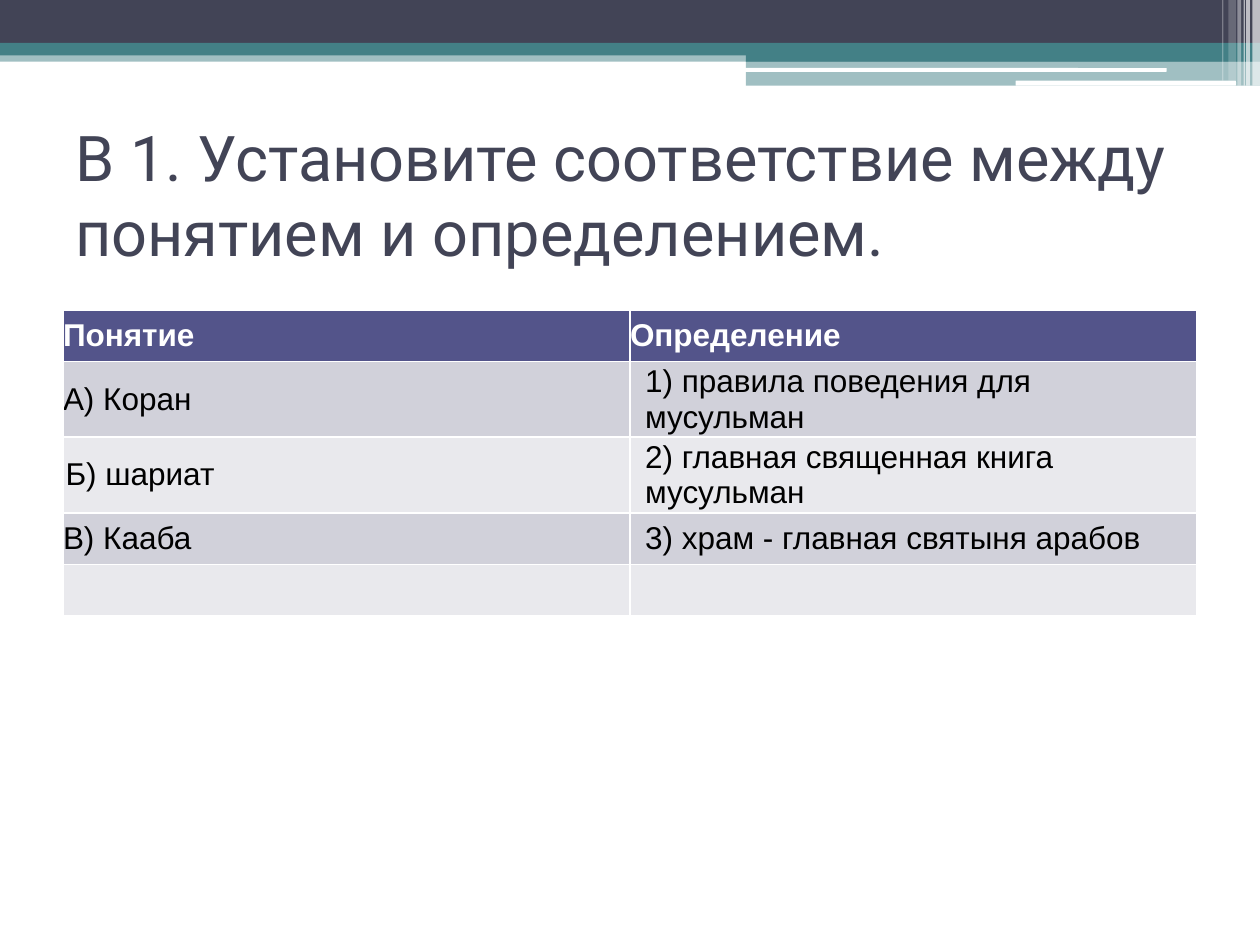
from dataclasses import dataclass

from lxml.etree import SubElement
from pptx import Presentation
from pptx.dml.color import RGBColor
from pptx.enum.shapes import MSO_SHAPE
from pptx.enum.text import MSO_ANCHOR
from pptx.oxml.ns import qn
from pptx.util import Inches, Pt


@dataclass(frozen=True)
class Theme:
    dark: str = "424456"
    teal: str = "438086"
    white: str = "FFFFFF"
    black: str = "000000"
    header: str = "53548A"
    bands: tuple = ("D1D1DA", "E9E9ED")
    title_font: str = "Roboto"
    body_font: str = "Arial"
    title_size: int = 36
    body_size: int = 18


def write_text(tf, text, *, font, size, color, bold=False, indent=0):
    p = tf.paragraphs[0]
    if indent:
        p._p.get_or_add_pPr().set("marL", str(Inches(indent)))
    r = p.add_run()
    r.text = text
    r.font.name = font
    r.font.size = Pt(size)
    r.font.bold = bold
    r.font.color.rgb = RGBColor.from_string(color)


class SlideBuilder:
    def __init__(self, slide, theme):
        self.s = slide
        self.theme = theme

    def bar(self, x, y, w, h, color, alpha=100, rounded=False):
        kind = MSO_SHAPE.ROUNDED_RECTANGLE if rounded else MSO_SHAPE.RECTANGLE
        sp = self.s.shapes.add_shape(kind, Inches(x), Inches(y), Inches(w), Inches(h))
        sp.shadow.inherit = False
        sp.line.fill.background()
        sp.fill.solid()
        sp.fill.fore_color.rgb = RGBColor.from_string(color)
        if alpha < 100:
            clr = sp._element.spPr.find(qn("a:solidFill"))[0]
            SubElement(clr, qn("a:alpha")).set("val", str(alpha * 1000))

    def title(self, x, y, w, h, text, bottom_inset):
        sp = self.s.shapes.add_textbox(Inches(x), Inches(y), Inches(w), Inches(h))
        tf = sp.text_frame
        tf.word_wrap = True
        tf.vertical_anchor = MSO_ANCHOR.MIDDLE
        tf.margin_bottom = Inches(bottom_inset)
        t = self.theme
        write_text(tf, text, font=t.title_font, size=t.title_size, color=t.dark)

    def table(self, x, y, w, row_h, rows):
        t = self.theme
        tbl = self.s.shapes.add_table(
            len(rows), len(rows[0]), Inches(x), Inches(y), Inches(w), Inches(row_h * len(rows))
        ).table
        for i, row in enumerate(rows):
            is_header = i == 0
            fill = t.header if is_header else t.bands[(i - 1) % 2]
            for j, (text, indent) in enumerate(row):
                cell = tbl.cell(i, j)
                cell.fill.solid()
                cell.fill.fore_color.rgb = RGBColor.from_string(fill)
                if not text:
                    continue
                cell.vertical_anchor = MSO_ANCHOR.MIDDLE
                cell.margin_left = cell.margin_right = 0
                cell.margin_top = cell.margin_bottom = 0
                write_text(cell.text_frame, text, font=t.body_font, size=t.body_size,
                           color=t.white if is_header else t.black,
                           bold=is_header, indent=indent)


def main():
    prs = Presentation()
    prs.slide_width, prs.slide_height = Inches(10), Inches(7.5)
    theme = Theme()
    s = SlideBuilder(prs.slides.add_slide(prs.slide_layouts[6]), theme)

    header_bars = [
        (0, 0.4, 10, 0.09, theme.teal, 50),
        (0, 0, 10, 0.34, theme.dark),
        (0, 0.34, 10, 0.1, theme.teal),
        (5.92, 0.39, 4.08, 0.1, theme.teal),
        (5.92, 0.48, 4.08, 0.2, theme.teal, 50),
        (5.91, 0.54, 3.35, 0.03, theme.white, 100, True),
        (8.06, 0.64, 1.75, 0.04, theme.white, 100, True),
    ]
    for bar in header_bars:
        s.bar(*bar)

    corner_stripes = [
        (9.94, 0.06, 0.68, 65),
        (9.89, 0.03, 0.68, 65),
        (9.87, 0.01, 0.68, 60),
        (9.82, 0.03, 0.68, 40),
        (9.75, 0.06, 0.64, 20),
        (9.7, 0.01, 0.64, 30),
    ]
    for x, w, h, alpha in corner_stripes:
        s.bar(x, 0, w, h, theme.white, alpha)

    s.title(0.5, 1.25, 9, 1.17,
            "В 1. Установите соответствие между понятием и определением.", 0.64)

    s.table(0.5, 2.46, 9, 0.41, [
        [("Понятие", 0), ("Определение", 0)],
        [("А) Коран", 0), ("1) правила поведения для мусульман", 0.12)],
        [("Б) шариат", 0.02), ("2) главная священная книга мусульман", 0.12)],
        [("В) Кааба", 0), ("3) храм - главная святыня арабов", 0.12)],
        [("", 0), ("", 0)],
    ])

    prs.save("out.pptx")


if __name__ == "__main__":
    main()
